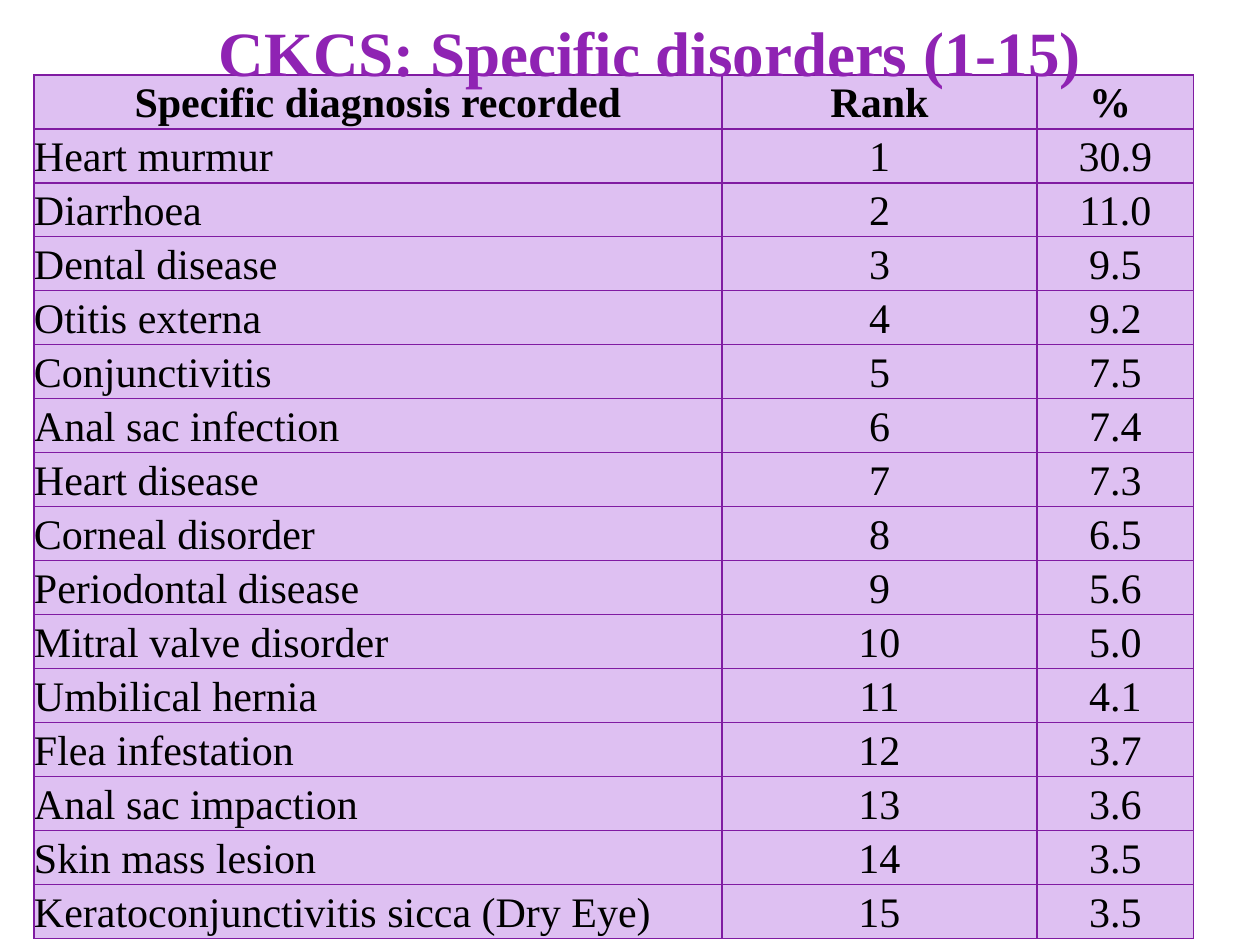
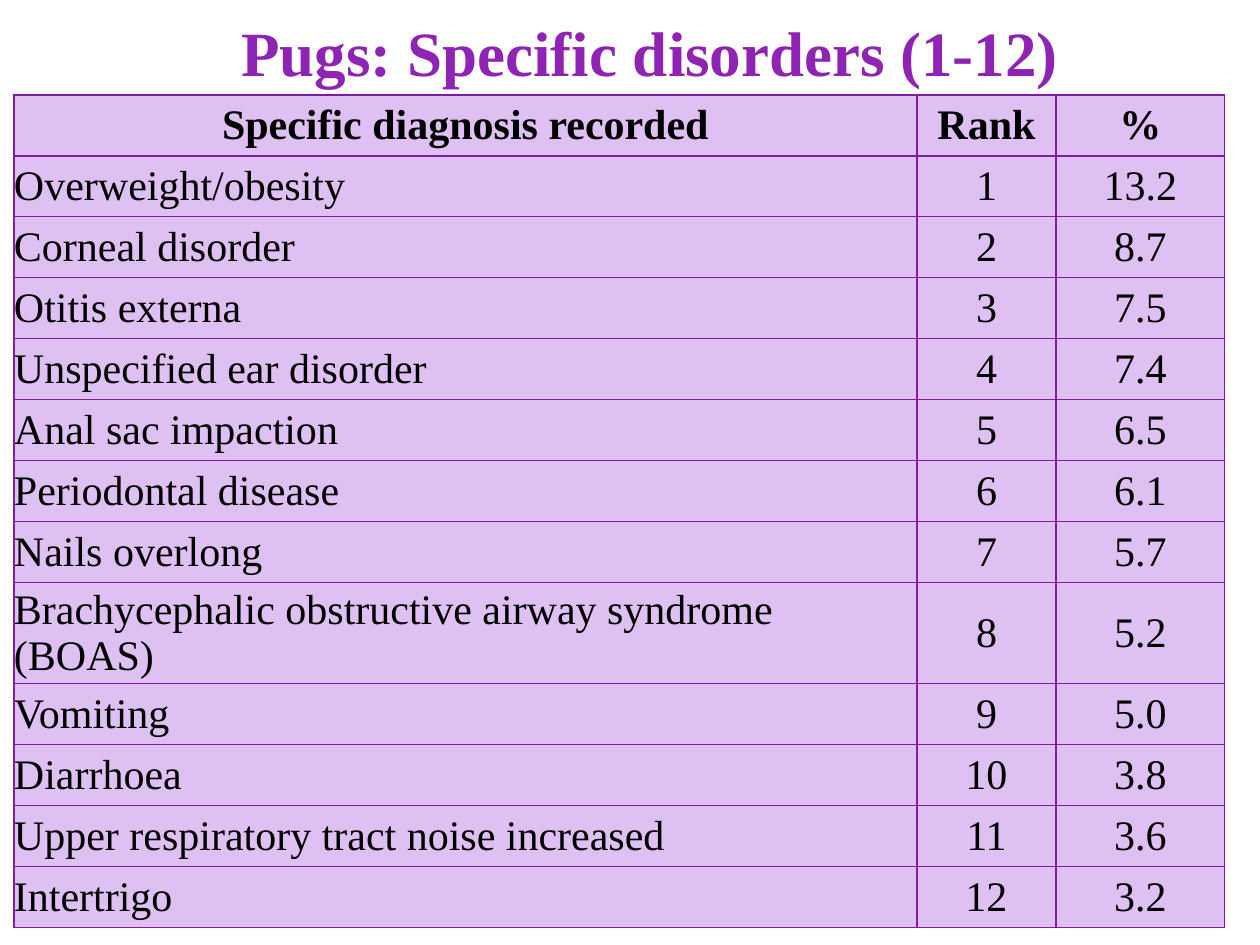
from lxml.etree import SubElement
from pptx import Presentation
from pptx.dml.color import RGBColor
from pptx.enum.text import MSO_ANCHOR as ANCHOR, PP_ALIGN as ALIGN
from pptx.oxml.ns import qn
from pptx.util import Pt

PX = 914400 / 126
FONT = "Times New Roman"
PURPLE = RGBColor(0x8F, 0x23, 0xB3)
BORDER = RGBColor(0x80, 0x1B, 0xA2)
LILAC = RGBColor(0xDE, 0xC0, 0xF2)
BLACK = RGBColor(0, 0, 0)

CKCS = [
    ("Heart murmur", "30.9"),
    ("Diarrhoea", "11.0"),
    ("Dental disease", "9.5"),
    ("Otitis externa", "9.2"),
    ("Conjunctivitis", "7.5"),
    ("Anal sac infection", "7.4"),
    ("Heart disease", "7.3"),
    ("Corneal disorder", "6.5"),
    ("Periodontal disease", "5.6"),
    ("Mitral valve disorder", "5.0"),
    ("Umbilical hernia", "4.1"),
    ("Flea infestation", "3.7"),
    ("Anal sac impaction", "3.6"),
    ("Skin mass lesion", "3.5"),
    ("Keratoconjunctivitis sicca (Dry Eye)", "3.5"),
]
PUGS = [
    ("Overweight/obesity", "13.2"),
    ("Corneal disorder", "8.7"),
    ("Otitis externa", "7.5"),
    ("Unspecified ear disorder", "7.4"),
    ("Anal sac impaction", "6.5"),
    ("Periodontal disease", "6.1"),
    ("Nails overlong", "5.7"),
    ("Brachycephalic obstructive airway syndrome (BOAS)", "5.2"),
    ("Vomiting", "5.0"),
    ("Diarrhoea", "3.8"),
    ("Upper respiratory tract noise increased", "3.6"),
    ("Intertrigo", "3.2"),
]


def px(n):
    return round(n * PX)


class Deck:
    def __init__(self):
        self.prs = Presentation()
        self.prs.slide_width, self.prs.slide_height = px(1260), px(945)
        self.s = None

    def slide(self):
        self.s = self.prs.slides.add_slide(self.prs.slide_layouts[6])

    def set_text(self, p, text, size, color, bold, align):
        p.text = text
        p.alignment = align
        for r in p.runs:
            r.font.name = FONT
            r.font.size = Pt(size)
            r.font.bold = bold
            r.font.color.rgb = color

    def title(self, text):
        tf = self.s.shapes.add_textbox(px(154), 0, px(992), px(76)).text_frame
        tf.word_wrap = True
        tf.margin_top = px(14)
        tf.margin_bottom = 0
        self.set_text(tf.paragraphs[0], text, 36, PURPLE, True, ALIGN.CENTER)

    def cell(self, cell, text, bold, align, spacing):
        cell.margin_left = cell.margin_right = 0
        cell.margin_top = cell.margin_bottom = 0
        cell.vertical_anchor = ANCHOR.MIDDLE
        p = cell.text_frame.paragraphs[0]
        self.set_text(p, text, 24, BLACK, bold, align)
        p.line_spacing = spacing
        tcPr = cell._tc.get_or_add_tcPr()
        for side in ("a:lnL", "a:lnR", "a:lnT", "a:lnB"):
            ln = SubElement(tcPr, qn(side), w=str(Pt(0.75)))
            fill = SubElement(ln, qn("a:solidFill"))
            SubElement(fill, qn("a:srgbClr"), val=str(BORDER))
        cell.fill.solid()
        cell.fill.fore_color.rgb = LILAC

    def table(self, disorders, left, top, widths, heights, percent="%", spacing=1.0):
        rows = [("Specific diagnosis recorded", "Rank", percent)]
        rows += [(name, str(rank), share)
                 for rank, (name, share) in enumerate(disorders, 1)]
        frame = self.s.shapes.add_table(len(rows), len(widths), px(left), px(top),
                                        px(sum(widths)), px(sum(heights)))
        tbl = frame.table
        tbl.first_row = tbl.horz_banding = False
        for col, width in zip(tbl.columns, widths):
            col.width = px(width)
        for i, (row, height) in enumerate(zip(rows, heights)):
            tbl.rows[i].height = px(height)
            for j, text in enumerate(row):
                align = ALIGN.LEFT if i and j == 0 else ALIGN.CENTER
                self.cell(tbl.cell(i, j), text, i == 0, align, spacing)


def main():
    deck = Deck()

    deck.slide()
    deck.table(CKCS, 34, 75, (688, 315, 157), [54] * 16, "% ", 1.07)
    deck.title("CKCS: Specific disorders (1-15)")

    deck.slide()
    deck.table(PUGS, 14, 95, (903, 139, 169), [61] * 8 + [101] + [61] * 4)
    deck.title("Pugs: Specific disorders (1-12)")

    deck.prs.save("out.pptx")


if __name__ == "__main__":
    main()
